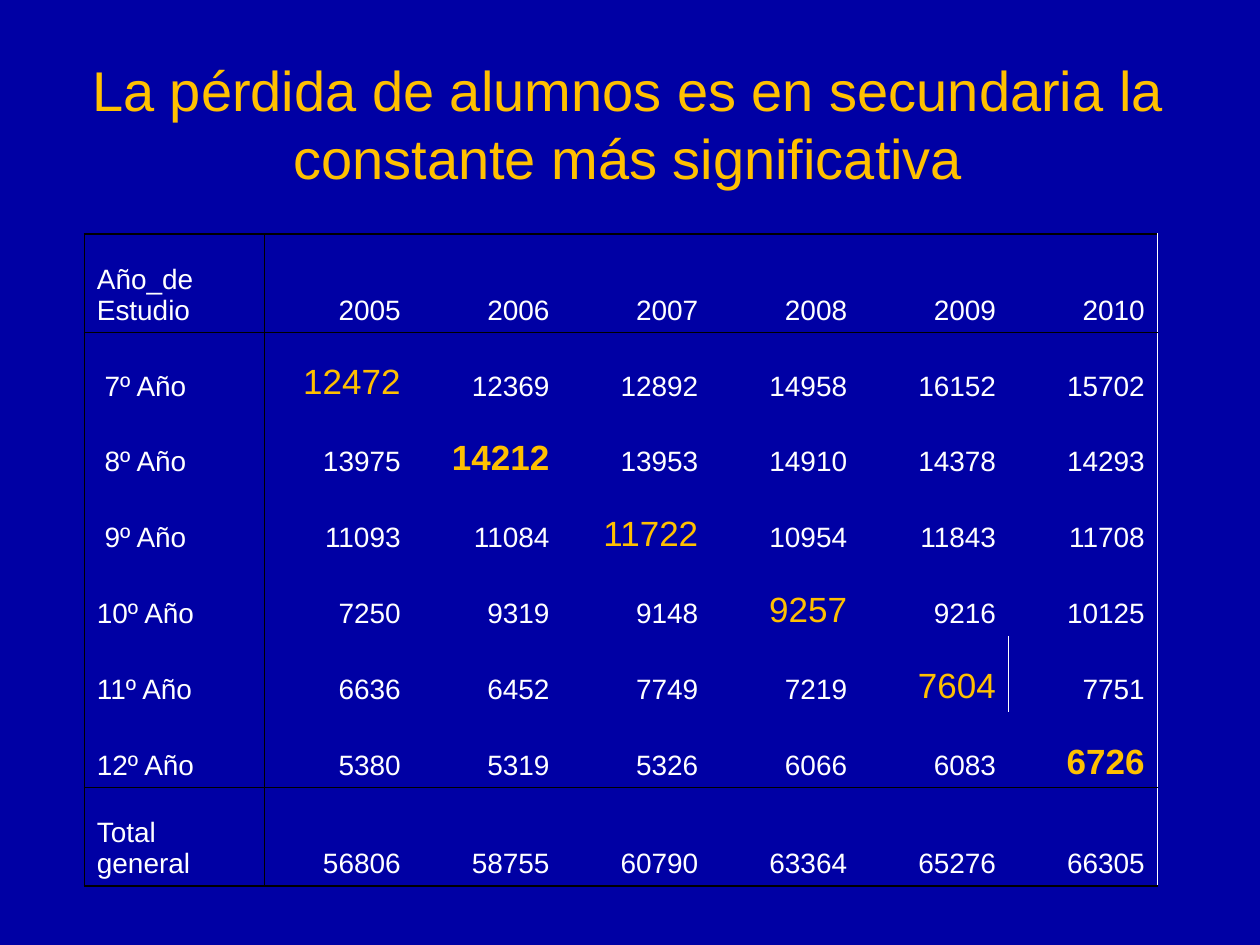
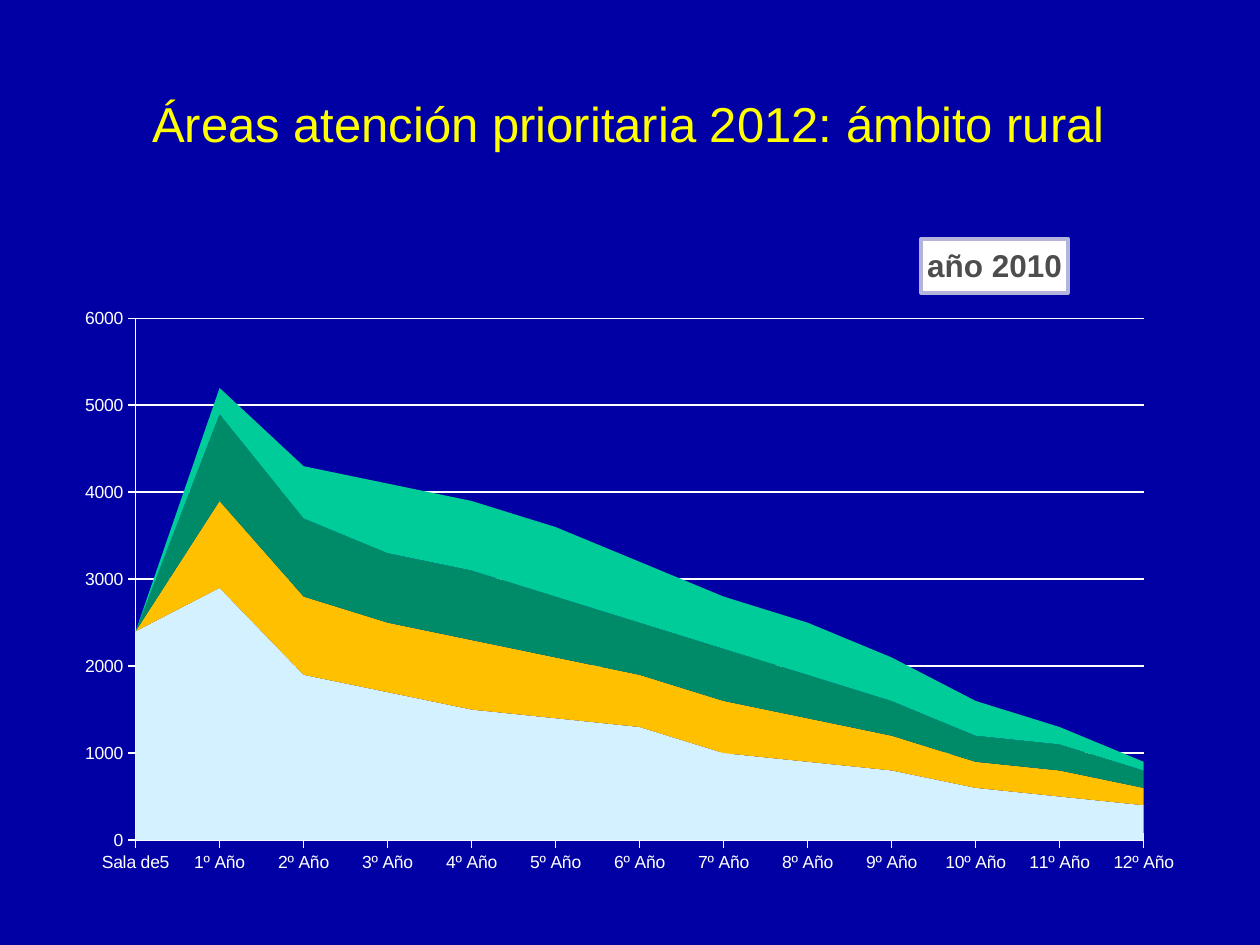
from lxml import etree
from pptx import Presentation
from pptx import util as u
from pptx.chart.data import CategoryChartData
from pptx.dml.color import RGBColor
from pptx.enum import chart as ch, text
from pptx.oxml import parse_xml
from pptx.oxml.ns import nsdecls, qn

NAVY = RGBColor(0x00, 0x00, 0xA4)
GOLD = RGBColor(0xFF, 0xC0, 0x00)
YELLOW = RGBColor(0xFF, 0xFF, 0x00)
WHITE = RGBColor(0xFF, 0xFF, 0xFF)
BLACK = RGBColor(0x00, 0x00, 0x00)
GREY = RGBColor(0x4D, 0x4D, 0x4D)
LILAC = RGBColor(0xB3, 0xB3, 0xDB)
ICE = RGBColor(0xD4, 0xF1, 0xFF)
GREEN = RGBColor(0x00, 0x8B, 0x68)
MINT = RGBColor(0x00, 0xCC, 0x99)

ENROLMENT = [
    ["Año_de Estudio", 2005, 2006, 2007, 2008, 2009, 2010],
    [" 7º Año", 12472, 12369, 12892, 14958, 16152, 15702],
    [" 8º Año", 13975, 14212, 13953, 14910, 14378, 14293],
    [" 9º Año", 11093, 11084, 11722, 10954, 11843, 11708],
    ["10º Año", 7250, 9319, 9148, 9257, 9216, 10125],
    ["11º Año", 6636, 6452, 7749, 7219, 7604, 7751],
    ["12º Año", 5380, 5319, 5326, 6066, 6083, 6726],
    ["Total general", 56806, 58755, 60790, 63364, 65276, 66305],
]
BOLD_ROWS = (2, 6)

GRADES = ["Sala de5"] + [f"{n}º Año" for n in range(1, 13)]
RURAL = [
    ("Series 1", ICE, (2400, 2900, 1900, 1700, 1500, 1400, 1300, 1000, 900, 800, 600, 500, 400)),
    ("Series 2", GOLD, (0, 1000, 900, 800, 800, 700, 600, 600, 500, 400, 300, 300, 200)),
    ("Series 3", GREEN, (0, 1000, 900, 800, 800, 700, 600, 600, 500, 400, 300, 300, 200)),
    ("Series 4", MINT, (0, 300, 600, 800, 800, 800, 700, 600, 600, 500, 400, 200, 100)),
]


def apply(target, values):
    for name, value in values.items():
        setattr(target, name, value)


def set_layout(parent, index, **fractions):
    for old in parent.findall(qn("c:layout")):
        parent.remove(old)
    layout = parse_xml(f"<c:layout {nsdecls('c')}><c:manualLayout/></c:layout>")
    for tag, value in fractions.items():
        etree.SubElement(layout[0], qn(f"c:{tag}")).set("val", str(value))
    parent.insert(index, layout)


def cell_borders(row, col, last_row, last_col):
    borders = {}
    if col == 0:
        borders["L"] = borders["R"] = BLACK
    if col == 1:
        borders["L"] = BLACK
    if col == last_col or (row, col) == (5, 5):
        borders["R"] = WHITE
    if (row, col) == (5, 6):
        borders["L"] = WHITE
    if row in (0, 1, last_row):
        borders["T"] = BLACK
    if row in (0, last_row - 1, last_row):
        borders["B"] = BLACK
    return borders


class Deck:
    FONT = "Arial"

    def __init__(self):
        self.prs = Presentation()
        apply(self.prs, {"slide_width": u.Cm(25.4), "slide_height": u.Cm(19.05)})
        fill = self.prs.slide_master.background.fill
        fill.solid()
        fill.fore_color.rgb = NAVY
        self.s = None

    def style(self, font, size, color, bold=False):
        apply(font, {"name": self.FONT, "size": u.Pt(size), "bold": bold})
        font.color.rgb = color

    def slide(self, title, size, color):
        self.s = self.prs.slides.add_slide(self.prs.slide_layouts[5])
        sp = self.s.shapes.title
        apply(sp, {"left": u.Cm(0.84), "top": u.Cm(0.64),
                   "width": u.Cm(23.65), "height": u.Cm(3.68)})
        tf = sp.text_frame
        tf.text = title
        apply(tf, {"vertical_anchor": text.MSO_ANCHOR.MIDDLE, "word_wrap": True,
                   "auto_size": text.MSO_AUTO_SIZE.NONE})
        p = tf.paragraphs[0]
        p.alignment = text.PP_ALIGN.CENTER
        self.style(p.runs[0].font, size, color)

    def borders(self, cell, colors):
        tcPr = cell._tc.get_or_add_tcPr()
        for index, side in enumerate("LRTB"):
            ln = parse_xml(f'<a:ln{side} {nsdecls("a")} w="12700"/>')
            if side in colors:
                fill = etree.SubElement(ln, qn("a:solidFill"))
                etree.SubElement(fill, qn("a:srgbClr")).set("val", str(colors[side]))
            else:
                etree.SubElement(ln, qn("a:noFill"))
            tcPr.insert(index, ln)

    def table(self, rows, left, top, col_widths, row_heights):
        table = self.s.shapes.add_table(
            len(rows), len(rows[0]), u.Cm(left), u.Cm(top),
            u.Cm(sum(col_widths)), u.Cm(sum(row_heights))).table
        apply(table, {"first_row": False, "horz_banding": False})
        for column, width in zip(table.columns, col_widths):
            column.width = u.Cm(width)
        for row, height in zip(table.rows, row_heights):
            row.height = u.Cm(height)
        for i, values in enumerate(rows):
            for j, value in enumerate(values):
                cell = table.cell(i, j)
                cell.text = str(value)
                cell.vertical_anchor = text.MSO_ANCHOR.BOTTOM
                cell.fill.background()
                p = cell.text_frame.paragraphs[0]
                p.alignment = text.PP_ALIGN.RIGHT if j else text.PP_ALIGN.LEFT
                font = p.runs[0].font
                if i == j and i > 0:
                    self.style(font, 20, GOLD, i in BOLD_ROWS)
                else:
                    self.style(font, 16, WHITE)
                self.borders(cell, cell_borders(i, j, len(rows) - 1, len(values) - 1))

    def axis(self, axis):
        apply(axis, {"major_tick_mark": ch.XL_TICK_MARK.CROSS,
                     "minor_tick_mark": ch.XL_TICK_MARK.NONE})
        self.style(axis.tick_labels.font, 10, WHITE)
        self.line(axis.format.line, WHITE, 1)

    def line(self, line, color, width):
        line.color.rgb = color
        line.width = u.Pt(width)

    def area_chart(self, title, categories, series, left, top, width, height):
        data = CategoryChartData()
        data.categories = categories
        for name, _, values in series:
            data.add_series(name, values)
        chart = self.s.shapes.add_chart(
            ch.XL_CHART_TYPE.AREA_STACKED, u.Cm(left), u.Cm(top),
            u.Cm(width), u.Cm(height), data).chart
        chart.has_legend = False
        self.style(chart.font, 10, WHITE)
        for plotted, (_, color, _) in zip(chart.plots[0].series, series):
            plotted.format.fill.solid()
            plotted.format.fill.fore_color.rgb = color
            plotted.format.line.fill.background()

        value_axis = chart.value_axis
        for axis in (chart.category_axis, value_axis):
            self.axis(axis)
        apply(value_axis, {"minimum_scale": 0, "maximum_scale": 6000,
                           "major_unit": 1000, "has_major_gridlines": True})
        self.line(value_axis.major_gridlines.format.line, WHITE, 1)
        value_axis._element.find(qn("c:crossBetween")).set("val", "midCat")
        chart.category_axis.has_major_gridlines = False

        heading = chart.chart_title
        heading.text_frame.text = title
        self.style(heading.text_frame.paragraphs[0].runs[0].font, 18, GREY, True)
        heading.format.fill.solid()
        heading.format.fill.fore_color.rgb = WHITE
        self.line(heading.format.line, LILAC, 2.25)
        heading._element.find(qn("c:overlay")).set("val", "1")
        set_layout(heading._element, 1, xMode="edge", yMode="edge", x=0.757, y=0.027)
        set_layout(chart._chartSpace.chart.plotArea, 0, layoutTarget="inner",
                   xMode="edge", yMode="edge", x=0.064, y=0.147, w=0.889, h=0.785)


def main():
    deck = Deck()
    deck.slide("La pérdida de alumnos es en secundaria la constante más significativa", 32, GOLD)
    deck.table(ENROLMENT, 1.7, 4.72, [3.63] + [3] * 6, [1.98] + [1.53] * 6 + [1.98])
    deck.slide("Áreas atención prioritaria 2012: ámbito rural", 28, YELLOW)
    deck.area_chart("año 2010", GRADES, RURAL, 1.27, 4.45, 22.86, 13.4)
    deck.prs.save("out.pptx")


if __name__ == "__main__":
    main()
